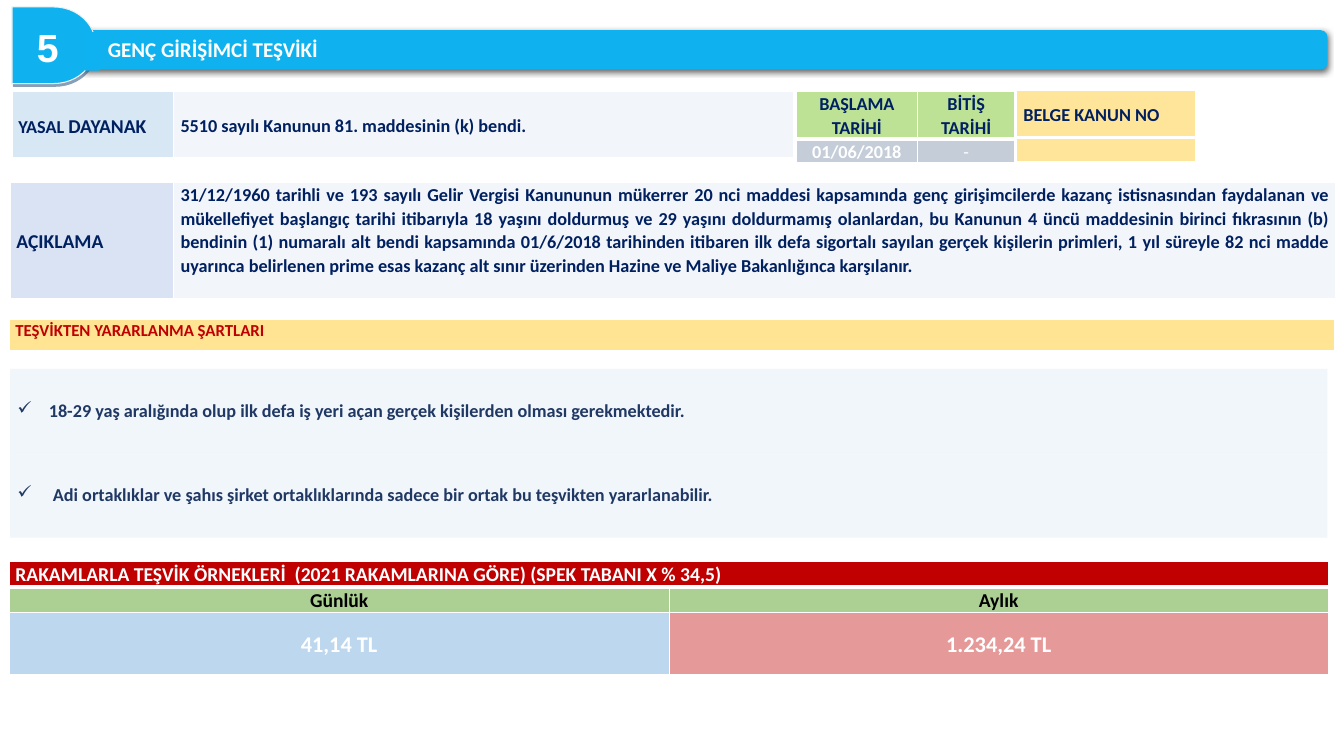
from dataclasses import dataclass

import pptx
import pptx.dml.color
import pptx.enum.shapes
import pptx.enum.text
import pptx.oxml
import pptx.oxml.ns
import pptx.util
from lxml import etree

Pt = pptx.util.Pt
Color = pptx.dml.color.RGBColor
Align = pptx.enum.text.PP_ALIGN
Anchor = pptx.enum.text.MSO_ANCHOR
Shape = pptx.enum.shapes.MSO_SHAPE
qn = pptx.oxml.ns.qn

WHITE = Color(0xFF, 0xFF, 0xFF)
BLACK = Color(0, 0, 0)
NAVY = Color(0x00, 0x20, 0x60)
DARK_BLUE = Color(0x20, 0x38, 0x64)
CYAN = Color(0x0F, 0xB2, 0xEF)
JOINT_CYAN = Color(0x0E, 0xB2, 0xF0)
RED = Color(0xC0, 0x00, 0x00)
AMBER = Color(0xFF, 0xC0, 0x00)
LIME = Color(0x92, 0xD0, 0x50)
GREEN = Color(0x70, 0xAD, 0x47)
BLUE = Color(0x5B, 0x9B, 0xD5)
SKY = Color(0xBD, 0xD7, 0xEE)
PALE = Color(0xEA, 0xEF, 0xF7)
ICE = Color(0xDE, 0xEB, 0xF7)
LAVENDER = Color(0xDA, 0xE3, 0xF3)
SLATE = Color(0xAD, 0xB9, 0xCA)
OUTLINE = Color(0xF2, 0xF2, 0xF2)
SHADOW_BLUE = Color(0x1F, 0x4D, 0x78)


@dataclass
class Entry:
    spans: list
    fill: Color
    opacity: int = 100
    color: Color = NAVY
    align: Align = Align.LEFT
    anchor: Anchor = Anchor.TOP
    inset: float = 4.5
    bottom: float = 3
    bold: bool = True
    bullet: str = ""


def add_span(para, text, size, color, bold=True, font="Calibri"):
    span = para.add_run()
    span.text = text
    span.font.size = Pt(size)
    span.font.name = font
    span.font.bold = bold
    span.font.color.rgb = color


def set_opacity(holder, percent):
    for color in holder.iter(qn("a:srgbClr")):
        etree.SubElement(color, qn("a:alpha"), val=str(percent * 1000))


def set_borders(cell, bottom, bordered):
    properties = cell._tc.get_or_add_tcPr()
    for index, side in enumerate(("lnL", "lnR", "lnT", "lnB")):
        width = bottom if side == "lnB" else 1
        line = etree.Element(qn(f"a:{side}"), w=str(Pt(width)))
        if bordered:
            paint = etree.SubElement(line, qn("a:solidFill"))
            etree.SubElement(paint, qn("a:srgbClr"), val=str(WHITE))
        else:
            etree.SubElement(line, qn("a:noFill"))
        properties.insert(index, line)


def add_bullet(para, mark):
    properties = para._p.get_or_add_pPr()
    properties.set("marL", str(Pt(22.5)))
    properties.set("indent", str(-Pt(22.5)))
    etree.SubElement(properties, qn("a:buChar"), char=mark)


def fill_cell(cell, entry, bordered):
    cell.margin_left = cell.margin_right = Pt(entry.inset)
    cell.margin_top = cell.margin_bottom = 0
    cell.vertical_anchor = entry.anchor
    cell.fill.solid()
    cell.fill.fore_color.rgb = entry.fill
    if entry.opacity < 100:
        set_opacity(cell._tc.tcPr, entry.opacity)
    set_borders(cell, entry.bottom, bordered)
    para = cell.text_frame.paragraphs[0]
    para.alignment = entry.align
    if entry.bullet:
        add_bullet(para, entry.bullet)
    else:
        para.line_spacing = 1.07
    for text, size in entry.spans:
        add_span(para, text, size, entry.color, entry.bold)
    if not entry.spans:
        etree.SubElement(para._p, qn("a:endParaRPr"), sz="1200")


def add_grid(page, left, top, widths, heights, entries, bordered=True):
    frame = page.shapes.add_table(len(heights), len(widths), Pt(left), Pt(top),
                                  Pt(sum(widths)), Pt(sum(heights)))
    table = frame.table
    table.first_row = table.horz_banding = False
    for column, width in zip(table.columns, widths):
        column.width = Pt(width)
    for row, height in zip(table.rows, heights):
        row.height = Pt(height)
    for row_index, row_entries in enumerate(entries):
        if len(row_entries) < len(widths):
            table.cell(row_index, 0).merge(table.cell(row_index, len(widths) - 1))
        for column_index, entry in enumerate(row_entries):
            fill_cell(table.cell(row_index, column_index), entry, bordered)


def add_block(page, kind, left, top, width, height, fill):
    box = page.shapes.add_shape(kind, Pt(left), Pt(top), Pt(width), Pt(height))
    box.shadow.inherit = False
    box.fill.solid()
    box.fill.fore_color.rgb = fill
    box.line.fill.background()
    return box


def add_shadow(box, color, opacity, blur, distance, angle):
    effects = box._element.spPr.find(qn("a:effectLst"))
    shadow = etree.SubElement(effects, qn("a:outerShdw"), blurRad=str(Pt(blur)),
                              dist=str(Pt(distance)), dir=str(angle * 60000),
                              algn="t", rotWithShape="0")
    etree.SubElement(shadow, qn("a:srgbClr"), val=str(color))
    set_opacity(shadow, opacity)


def add_header(page):
    banner = add_block(page, Shape.ROUNDED_RECTANGLE, 57.6, 21.6, 890.6, 28.1, CYAN)
    add_shadow(banner, BLACK, 63, 4.5, 1.5, 90)

    title = page.shapes.title
    title.left, title.top, title.width, title.height = Pt(59), Pt(23), Pt(887.8), Pt(25.9)
    banner.element.addnext(title.element)
    frame = title.text_frame
    frame.auto_size = pptx.enum.text.MSO_AUTO_SIZE.NONE
    frame.word_wrap = True
    frame.vertical_anchor = Anchor.MIDDLE
    frame.margin_left = Pt(18)
    frame.margin_right = frame.margin_top = frame.margin_bottom = Pt(4.3)
    para = frame.paragraphs[0]
    para.alignment = Align.LEFT
    para.line_spacing = 0.9
    add_span(para, "GENÇ GİRİŞİMCİ TEŞVİKİ", 15, WHITE)

    badge = add_block(page, Shape.FLOWCHART_DELAY, 8.6, 5, 59.8, 54.7, CYAN)
    badge.line.color.rgb = OUTLINE
    badge.line.width = Pt(0.75)
    add_shadow(badge, SHADOW_BLUE, 52, 0, 2.2, 63)
    badge.text_frame.vertical_anchor = Anchor.TOP
    para = badge.text_frame.paragraphs[0]
    para.alignment = Align.CENTER
    para.space_after = Pt(8)
    add_span(para, "5", 28, WHITE, font="Arial")
    add_block(page, Shape.RECTANGLE, 60.5, 23, 10.8, 27.4, JOINT_CYAN)


def main():
    deck = pptx.Presentation()
    deck.slide_width, deck.slide_height = Pt(960), Pt(540)
    page = deck.slides.add_slide(deck.slide_layouts[5])
    label = {"align": Align.JUSTIFY, "anchor": Anchor.MIDDLE}
    centered = {"align": Align.CENTER}
    date = {"color": WHITE, "bottom": 1, **centered}
    amount = {"color": WHITE, "bottom": 1, "anchor": Anchor.MIDDLE, "inset": 5.2, **centered}
    condition = {"color": DARK_BLUE, "anchor": Anchor.MIDDLE, "inset": 5.2, "bullet": "✓"}

    add_grid(page, 8.6, 65.5, [115.2, 442.8], [48.2], [[
        Entry([("YASAL ", 13), ("DAYANAK", 14)], SKY, 60, **label),
        Entry([("5510 sayılı Kanunun 81. maddesinin (k) bendi.", 13)], PALE, 60, inset=5.2, **label)]])
    add_grid(page, 568.8, 65.5, [86.4, 69.8], [33.5, 17], [
        [Entry([(text, 13)], LIME, 60, **centered) for text in ("BAŞLAMA TARİHİ", "BİTİŞ TARİHİ")],
        [Entry([("01/06/2018", 13)], SLATE, 70, **date),
         Entry([("-", 13)], SLATE, 70, bold=False, **date)]])
    add_grid(page, 7.2, 130.3, [116.6, 830.2], [84.2], [[
        Entry([("AÇIKLAMA", 14)], LAVENDER, **label),
        Entry([("31/12/1960 tarihli ve 193 sayılı Gelir Vergisi Kanununun mükerrer 20 nci maddesi "
                "kapsamında genç girişimcilerde kazanç istisnasından faydalanan ve mükellefiyet "
                "başlangıç tarihi itibarıyla 18 yaşını doldurmuş ve 29 yaşını doldurmamış olanlardan, "
                "bu Kanunun 4 üncü maddesinin birinci fıkrasının (b) bendinin (1) numaralı alt bendi "
                "kapsamında 01/6/2018 tarihinden itibaren ilk defa sigortalı sayılan gerçek kişilerin "
                "primleri, 1 yıl süreyle 82 nci madde uyarınca belirlenen prime esas kazanç alt sınır "
                "üzerinden Hazine ve Maliye Bakanlığınca karşılanır.", 13)],
              PALE, 60, align=Align.JUSTIFY, inset=5.2)]])
    add_grid(page, 6.5, 401, [471.6, 470.6], [18, 18, 44.6], [
        [Entry([("RAKAMLARLA TEŞVİK ÖRNEKLERİ  (2021 RAKAMLARINA GÖRE) (SPEK TABANI X % 34,5)", 14)],
               RED, color=WHITE)],
        [Entry([(text, 14)], GREEN, 58, BLACK, bottom=1, **centered) for text in ("Günlük", "Aylık")],
        [Entry([("41,14 TL", 16)], BLUE, 40, **amount),
         Entry([("1.234,24 TL", 16)], RED, 40, **amount)]])
    add_grid(page, 6.5, 228.2, [946.8], [23], [
        [Entry([("TEŞVİKTEN YARARLANMA ŞARTLARI", 12)], AMBER, 42, RED)]])
    add_header(page)
    add_grid(page, 725.8, 64.8, [128.2], [33.5, 17.3], [
        [Entry([("BELGE KANUN NO", 13)], AMBER, 40, anchor=Anchor.MIDDLE, inset=5.2)],
        [Entry([], AMBER, 40, bottom=1)]])
    add_grid(page, 7.2, 263.5, [941], [60, 60.5], [
        [Entry([("18-29 yaş aralığında olup ilk defa iş yeri açan gerçek kişilerden olması "
                 "gerekmektedir.", 13)], ICE, 42, **condition)],
        [Entry([(" Adi ortaklıklar ve şahıs şirket ortaklıklarında sadece bir ortak bu teşvikten "
                 "yararlanabilir.", 13)], ICE, 42, **condition)]], bordered=False)
    deck.save("out.pptx")


if __name__ == "__main__":
    main()
